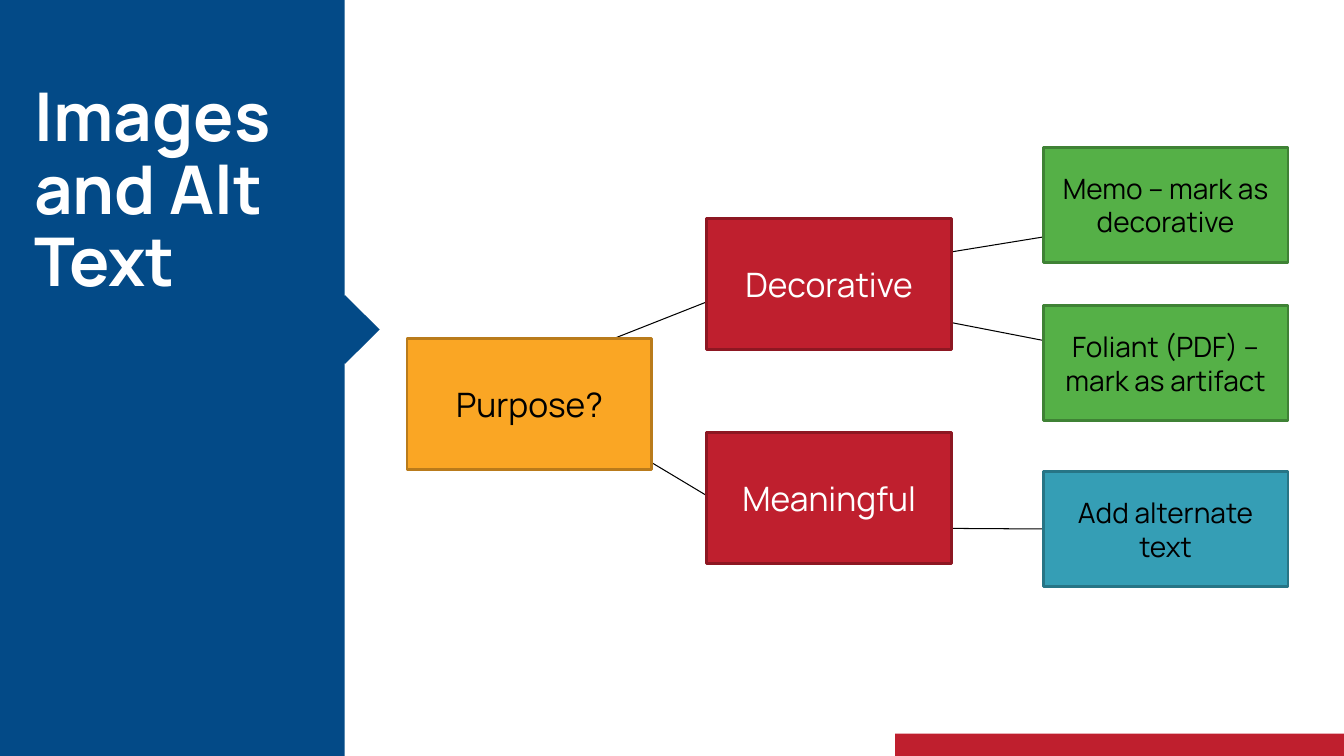
"""Build a slide with a decision tree for images and alternate text."""
import pptx
import pptx.dml.color
import pptx.enum.shapes
import pptx.enum.text
import pptx.oxml.ns
import pptx.util
from lxml import etree

Cm = pptx.util.Cm
Pt = pptx.util.Pt
Shape = pptx.enum.shapes.MSO_SHAPE
Align = pptx.enum.text.PP_ALIGN
Anchor = pptx.enum.text.MSO_ANCHOR

COLOURS = {
    "navy": "034A87", "red": "BF1F2E", "dark red": "8D1722",
    "orange": "FAA624", "dark orange": "B97B1B",
    "green": "55B047", "dark green": "3F8235",
    "teal": "359EB5", "dark teal": "277586",
    "black": "000000", "white": "FFFFFF",
}
BOX_WIDTH = 6.17
PURPOSE_LEFT, CHOICE_LEFT, ACTION_LEFT = 10.26, 17.81, 26.29
STEP = {"height": 3.3, "size": 24}
ACTION = {"height": 2.9, "size": 20}

BOXES = [
    ("Purpose?", PURPOSE_LEFT, 8.53, "orange", "black", STEP),
    ("Meaningful", CHOICE_LEFT, 10.9, "red", "white", STEP),
    ("Decorative", CHOICE_LEFT, 5.51, "red", "white", STEP),
    ("Memo – mark as decorative", ACTION_LEFT, 3.71, "green", "black", ACTION),
    ("Foliant (PDF) – mark as artifact", ACTION_LEFT, 7.7, "green", "black", ACTION),
    ("Add alternate text", ACTION_LEFT, 11.89, "teal", "black", ACTION),
]
BRANCHES = [
    (14.76, 8.81, 18.69, 7.26),
    (15.16, 10.9, 19.18, 13.31),
    (23.16, 6.48, 28.02, 5.69),
    (23.57, 8.05, 27.48, 8.81),
    (23.16, 13.31, 27.99, 13.34),
]
PANELS = [
    (Shape.FLOWCHART_DECISION, (7.82, 7.44, 1.75, 1.73), "navy"),
    (Shape.RECTANGLE, (0, 0, 8.69, 19.05), "navy"),
    (Shape.RECTANGLE, (22.56, 18.49, 11.31, 0.56), "red"),
]


def colour(name):
    """Return the named colour."""
    return pptx.dml.color.RGBColor.from_string(COLOURS[name])


def apply_format(target, values):
    """Set every attribute given in a dict of format values."""
    for name, value in values.items():
        setattr(target, name, value)


def write_text(box, text, ink, frame_format, para_format, font_format):
    """Write one formatted paragraph in a shape."""
    frame = box.text_frame
    apply_format(frame, {"word_wrap": True, **frame_format})
    para = frame.paragraphs[0]
    apply_format(para, para_format)
    span = para.add_run()
    span.text = text
    apply_format(span.font, {"name": "Manrope", **font_format})
    span.font.color.rgb = colour(ink)


def add_panel(page, kind, place, fill):
    """Add a filled shape without outline or shadow."""
    panel = page.shapes.add_shape(kind, *map(Cm, place))
    panel.shadow.inherit = False
    panel.fill.solid()
    panel.fill.fore_color.rgb = colour(fill)
    panel.line.fill.background()
    return panel


def add_box(page, text, left, top, fill, ink, style):
    """Add an outlined box of the tree with centred text."""
    place = (left, top, BOX_WIDTH, style["height"])
    box = add_panel(page, Shape.RECTANGLE, place, fill)
    box.line.color.rgb = colour("dark " + fill)
    box.line.width = Pt(2)
    write_text(box, text, ink, {"vertical_anchor": Anchor.MIDDLE},
               {"alignment": Align.CENTER}, {"size": Pt(style["size"])})


def add_branch(page, ends):
    """Add a thin straight line between two boxes."""
    branch = page.shapes.add_connector(
        pptx.enum.shapes.MSO_CONNECTOR.STRAIGHT, *map(Cm, ends))
    branch.line.color.rgb = colour("black")
    branch.line.width = Pt(0.75)
    properties = branch.element.find(pptx.oxml.ns.qn("p:spPr"))
    etree.SubElement(properties, pptx.oxml.ns.qn("a:effectLst"))


def add_title(page, text):
    """Place the title in front of the side panel."""
    title = page.shapes.title
    apply_format(title, {"left": Cm(0.61), "top": Cm(1.98),
                         "width": Cm(7.29), "height": Cm(6.07)})
    write_text(title, text, "white",
               {"vertical_anchor": Anchor.TOP,
                "auto_size": pptx.enum.text.MSO_AUTO_SIZE.NONE},
               {"alignment": Align.LEFT, "line_spacing": 0.9},
               {"size": Pt(48), "bold": True})
    title.element.getparent().append(title.element)


def main():
    """Build and save the slide."""
    deck = pptx.Presentation()
    apply_format(deck, {"slide_width": Cm(33.87), "slide_height": Cm(19.05)})
    page = deck.slides.add_slide(deck.slide_layouts.get_by_name("Title Only"))
    for panel in PANELS:
        add_panel(page, *panel)
    add_title(page, "Images and Alt Text")
    for ends in BRANCHES:
        add_branch(page, ends)
    for box in BOXES:
        add_box(page, *box)
    deck.save("out.pptx")


if __name__ == "__main__":
    main()
